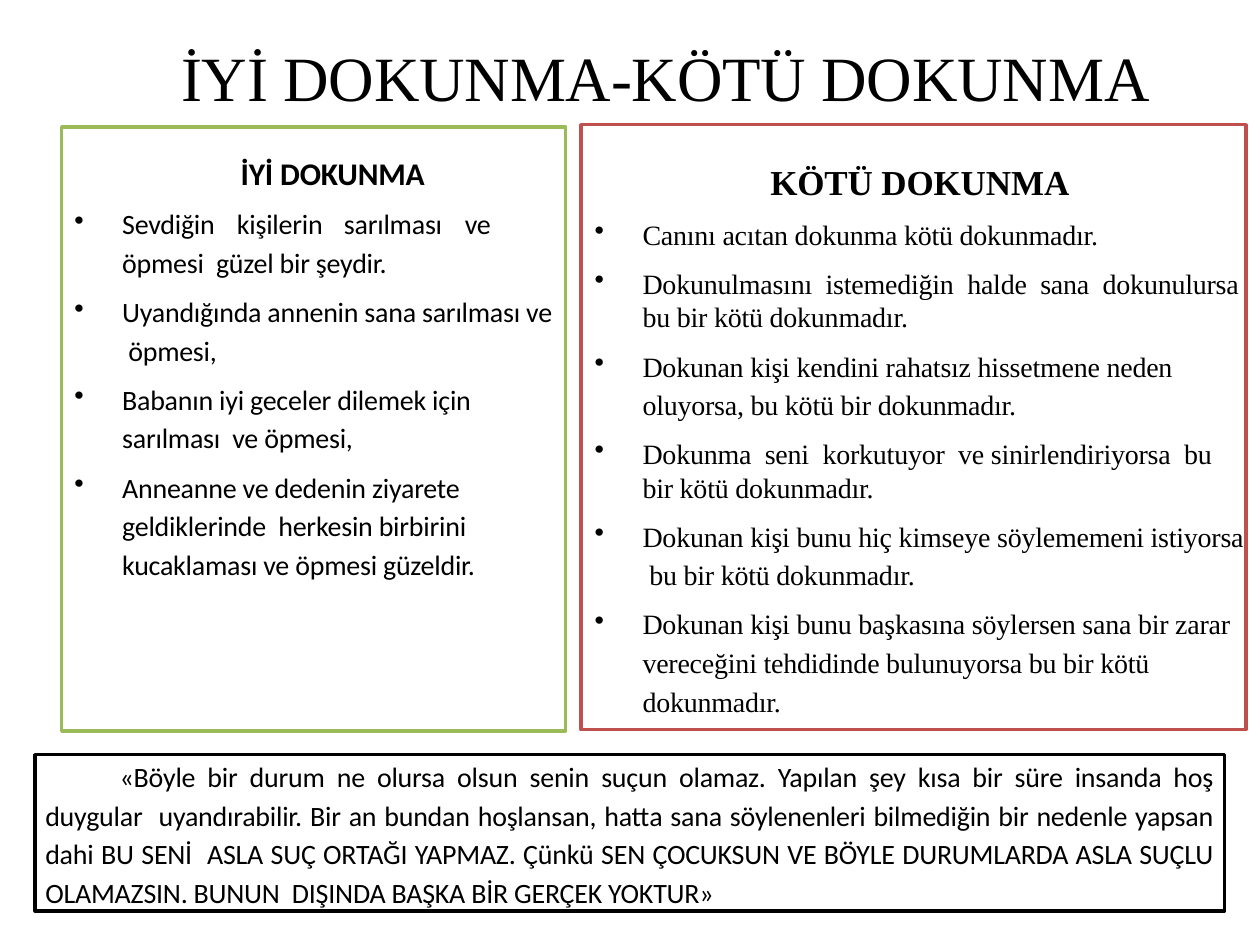
"""Build a slide that contrasts good and bad touch, with a closing message."""
from dataclasses import dataclass

from lxml import etree
from pptx import Presentation
from pptx.dml.color import RGBColor
from pptx.enum.shapes import MSO_SHAPE
from pptx.enum.text import MSO_ANCHOR, PP_ALIGN
from pptx.oxml.ns import qn
from pptx.util import Inches, Pt

RECTANGLE = MSO_SHAPE.RECTANGLE
TOP, MIDDLE = MSO_ANCHOR.TOP, MSO_ANCHOR.MIDDLE
LEFT, CENTER, JUSTIFY = PP_ALIGN.LEFT, PP_ALIGN.CENTER, PP_ALIGN.JUSTIFY


@dataclass(frozen=True)
class Theme:
    """Colours, fonts and type sizes of the slide."""
    text: RGBColor = RGBColor(0, 0, 0)
    good: RGBColor = RGBColor(0x9B, 0xBA, 0x58)
    bad: RGBColor = RGBColor(0xC0, 0x50, 0x4D)
    sans: str = "Calibri"
    serif: str = "Times New Roman"
    title: int = 36
    good_heading: int = 18
    bad_heading: int = 20
    body: int = 16
    outline: float = 2.04
    tracking: int = -10
    hang: float = 0.38


GOOD_ITEMS = [
    "Sevdiğin\tkişilerin\tsarılması\tve\töpmesi  güzel bir şeydir.",
    "Uyandığında annenin sana sarılması ve  öpmesi,",
    "Babanın iyi geceler dilemek için sarılması  ve öpmesi,",
    "Anneanne ve dedenin ziyarete geldiklerinde  herkesin birbirini "
    "kucaklaması ve öpmesi güzeldir.",
]
GOOD_TABS = (1.29, 2.14, 3.1, 3.47)
TIGHT = {"space_before": Pt(8.8), "line_spacing": 1.0}
LOOSE = {"space_before": Pt(6), "line_spacing": 1.15}
BAD_ITEMS = [
    ("Canını acıtan dokunma kötü dokunmadır.", TIGHT),
    ("Dokunulmasını  istemediğin  halde  sana  dokunulursa bu bir kötü dokunmadır.", TIGHT),
    ("Dokunan kişi kendini rahatsız hissetmene neden  oluyorsa, bu kötü bir dokunmadır.", LOOSE),
    ("Dokunma  seni  korkutuyor  ve sinirlendiriyorsa  bu bir kötü dokunmadır.", TIGHT),
    ("Dokunan kişi bunu hiç kimseye söylememeni istiyorsa  bu bir kötü dokunmadır.", LOOSE),
    ("Dokunan kişi bunu başkasına söylersen sana bir zarar  vereceğini tehdidinde "
     "bulunuyorsa bu bir kötü  dokunmadır.", LOOSE),
]
MESSAGE = (
    "«Böyle bir durum ne olursa olsun senin suçun olamaz. Yapılan şey kısa bir süre "
    "insanda hoş duygular  uyandırabilir. Bir an bundan hoşlansan, hatta sana "
    "söylenenleri bilmediğin bir nedenle yapsan dahi BU SENİ  ASLA SUÇ ORTAĞI YAPMAZ. "
    "Çünkü SEN ÇOCUKSUN VE BÖYLE DURUMLARDA ASLA SUÇLU OLAMAZSIN. BUNUN  DIŞINDA "
    "BAŞKA BİR GERÇEK YOKTUR»"
)


def set_all(obj, values):
    """Set each named attribute of an object."""
    for name, value in values.items():
        setattr(obj, name, value)


class SlideBuilder:
    """Holds the theme and the current slide, and adds elements to it."""

    def __init__(self, slide, theme):
        self.slide, self.theme = slide, theme

    def prepare(self, sp, anchor=TOP, top=0, side=0):
        """Set the wrapping, anchor and insets of a text frame."""
        tf = sp.text_frame
        set_all(tf, {"word_wrap": True, "vertical_anchor": anchor,
                     "margin_left": Inches(side), "margin_right": Inches(side),
                     "margin_top": Inches(top), "margin_bottom": 0})
        return tf

    def title(self, text, box):
        """Move and format the title placeholder."""
        sp = self.slide.shapes.title
        set_all(sp, dict(zip(("left", "top", "width", "height"), map(Inches, box))))
        tf = self.prepare(sp, MIDDLE)
        self.paragraph(tf, text, self.theme.serif, self.theme.title, {"alignment": CENTER})

    def frame(self, box, color):
        """Add an unfilled outlined rectangle."""
        sp = self.slide.shapes.add_shape(RECTANGLE, *map(Inches, box))
        sp.shadow.inherit = False
        sp.fill.background()
        sp.line.color.rgb = color
        sp.line.width = Pt(self.theme.outline)
        return sp

    def text_box(self, box, top=0):
        """Add a wrapping text box and return its text frame."""
        return self.prepare(self.slide.shapes.add_textbox(*map(Inches, box)), top=top)

    def paragraph(self, tf, text, font, size, layout, bold=False, margin=0, indent=0):
        """Add one formatted paragraph to a text frame."""
        p = tf.paragraphs[-1]
        if p.runs:
            p = tf.add_paragraph()
        set_all(p, layout)
        pPr = p._p.get_or_add_pPr()
        pPr.set("marL", str(Inches(margin)))
        pPr.set("indent", str(Inches(indent)))
        r = p.add_run()
        r.text = text
        set_all(r.font, {"name": font, "size": Pt(size), "bold": bold})
        r.font.color.rgb = self.theme.text
        r.font._element.set("spc", str(self.theme.tracking))
        return pPr

    def bullet(self, tf, text, font, layout, tabs=()):
        """Add a hanging bullet, with tab stops where given."""
        hang = self.theme.hang
        pPr = self.paragraph(tf, text, font, self.theme.body,
                             {"alignment": LEFT, **layout}, margin=hang, indent=-hang)
        etree.SubElement(pPr, qn("a:buChar"), char="•")
        if tabs:
            tab_list = etree.SubElement(pPr, qn("a:tabLst"))
            for pos in tabs:
                etree.SubElement(tab_list, qn("a:tab"), pos=str(Inches(pos)), algn="l")


def main():
    """Compose the slide and save it."""
    prs = Presentation()
    prs.slide_width, prs.slide_height = Inches(10), Inches(7.5)
    theme = Theme()
    s = SlideBuilder(prs.slides.add_slide(prs.slide_layouts[5]), theme)
    s.title("İYİ DOKUNMA-KÖTÜ DOKUNMA", (1.38, 0.3, 7.8, 0.61))

    s.frame((0.49, 1.01, 4, 4.79), theme.good)
    tf = s.text_box((0.59, 1.22, 3.83, 5.4))
    s.paragraph(tf, "İYİ DOKUNMA", theme.sans, theme.good_heading,
                {"alignment": LEFT}, bold=True, margin=1.32)
    for text in GOOD_ITEMS:
        s.bullet(tf, text, theme.sans, LOOSE, GOOD_TABS if "\t" in text else ())

    s.frame((4.61, 0.99, 5.28, 4.8), theme.bad)
    tf = s.text_box((4.72, 1.01, 5.16, 4.75), top=0.26)
    s.paragraph(tf, "KÖTÜ DOKUNMA", theme.serif, theme.bad_heading,
                {"alignment": CENTER}, bold=True)
    for text, layout in BAD_ITEMS:
        s.bullet(tf, text, theme.serif, layout)

    sp = s.frame((0.28, 5.99, 9.44, 1.24), theme.text)
    s.paragraph(s.prepare(sp, side=0.08), MESSAGE, theme.sans, theme.body,
                {"alignment": JUSTIFY, "line_spacing": 1.15}, indent=0.59)
    prs.save("out.pptx")


if __name__ == "__main__":
    main()
